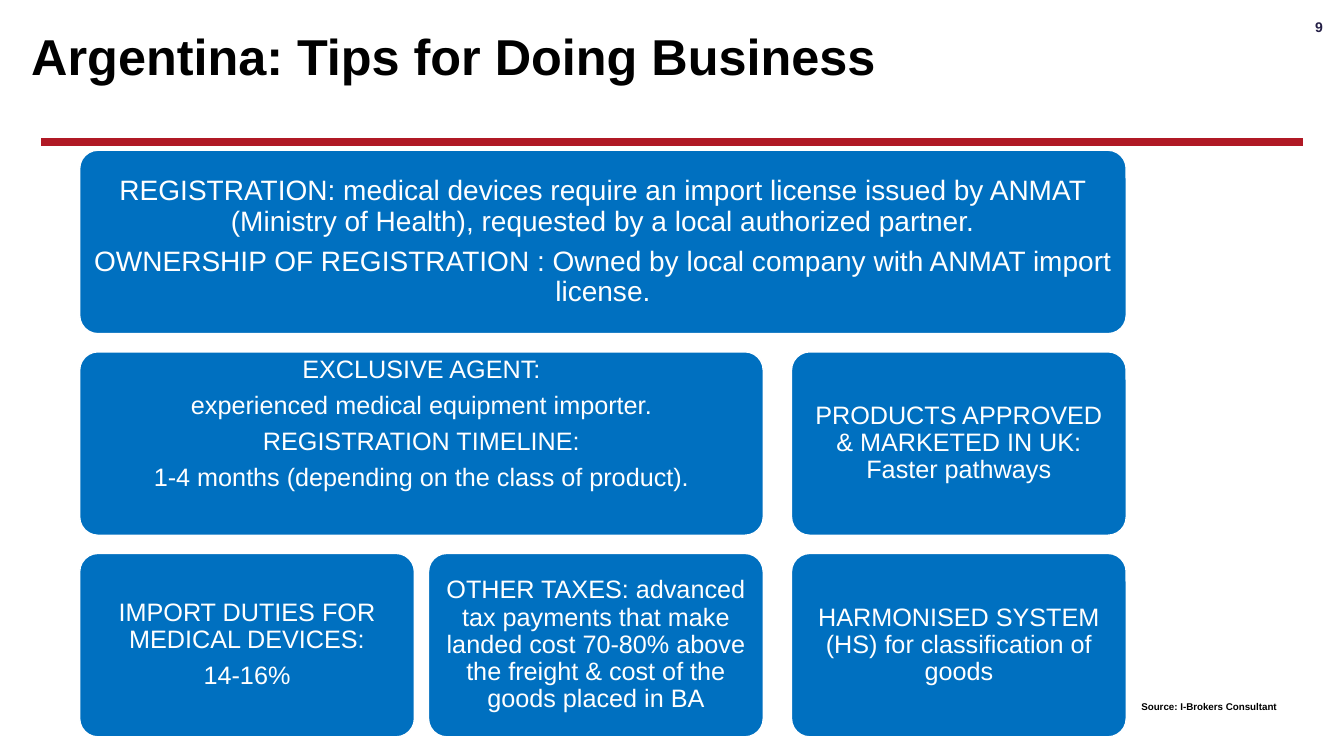
from dataclasses import dataclass

from lxml.etree import SubElement
from pptx import Presentation
from pptx.dml.color import RGBColor
from pptx.enum.shapes import MSO_CONNECTOR, MSO_SHAPE
from pptx.enum.text import MSO_ANCHOR, PP_ALIGN
from pptx.oxml.ns import qn
from pptx.util import Inches, Pt

BLUE, RED, NAVY, WHITE, BLACK = "0070C0", "B01925", "241F46", "FFFFFF", "000000"
COLUMNS = (0.79, 4.25, 7.85)
ROW_TOP, ROW_PITCH = 1.49, 2.0
CARD_W, CARD_H = 3.32, 1.82


@dataclass
class Card:
    row: int
    first: int
    last: int
    lines: list[str]
    size: int = 18
    inset: float = 0.07
    top: float = 0.07
    bottom: float = 0.07


CARDS = [
    Card(0, 0, 2, [
        "REGISTRATION: medical devices require an import license issued by ANMAT "
        "(Ministry of Health), requested by a local authorized partner.",
        "OWNERSHIP OF REGISTRATION : Owned by local company with ANMAT import license.",
    ], size=20, inset=0.08),
    Card(1, 0, 1, [
        "EXCLUSIVE AGENT:",
        "experienced medical equipment importer.",
        "REGISTRATION TIMELINE:",
        "1-4 months (depending on the class of product).",
    ], top=0, bottom=0.39),
    Card(1, 2, 2, ["PRODUCTS APPROVED & MARKETED IN UK: Faster pathways"]),
    Card(2, 0, 0, ["IMPORT DUTIES FOR MEDICAL DEVICES:", "14-16%"]),
    Card(2, 1, 1, [
        "OTHER TAXES: advanced tax payments that make landed cost 70-80% above "
        "the freight & cost of the goods placed in BA",
    ]),
    Card(2, 2, 2, ["HARMONISED SYSTEM (HS) for classification of goods"]),
]


def rgb(color: str) -> RGBColor:
    return RGBColor.from_string(color)


def write(tf, lines: list[str], *, size: int, color: str = BLACK, bold: bool = False,
          align=PP_ALIGN.LEFT, spacing: float = 1.0, after: float = 0) -> None:
    tf.word_wrap = True
    for i, text in enumerate(lines):
        p = tf.paragraphs[0] if i == 0 else tf.add_paragraph()
        p.alignment = align
        p.line_spacing = spacing
        p.space_before = Pt(0)
        p.space_after = Pt(after)
        r = p.add_run()
        r.text = text
        r.font.name = "Arial"
        r.font.size = Pt(size)
        r.font.bold = bold
        r.font.color.rgb = rgb(color)


def set_insets(tf, left: float, top: float, right: float, bottom: float) -> None:
    tf.margin_left, tf.margin_top = Inches(left), Inches(top)
    tf.margin_right, tf.margin_bottom = Inches(right), Inches(bottom)


def add_title(s) -> None:
    sp = s.shapes.title
    sp.left, sp.top = Inches(0.21), Inches(0.27)
    sp.width, sp.height = Inches(12.64), Inches(0.68)
    tf = sp.text_frame
    tf.vertical_anchor = MSO_ANCHOR.TOP
    write(tf, ["Argentina: Tips for Doing Business"], size=36, bold=True, spacing=0.9)


def add_page_number(s) -> None:
    sp = s.shapes.add_textbox(Inches(12.82), Inches(0.18), Inches(0.3), Inches(0.17))
    set_insets(sp.text_frame, 0, 0, 0, 0)
    write(sp.text_frame, ["9"], size=10, color=NAVY, bold=True, align=PP_ALIGN.RIGHT)


def add_rule(s) -> None:
    line = s.shapes.add_connector(MSO_CONNECTOR.STRAIGHT, Inches(0.41), Inches(1.41),
                                  Inches(12.92), Inches(1.41))
    line.line.color.rgb = rgb(RED)
    line.line.width = Pt(6)
    SubElement(line._element.spPr, qn("a:effectLst"))


def add_card(s, card: Card) -> None:
    left = COLUMNS[card.first]
    width = COLUMNS[card.last] + CARD_W - left
    sp = s.shapes.add_shape(MSO_SHAPE.ROUNDED_RECTANGLE, Inches(left),
                            Inches(ROW_TOP + card.row * ROW_PITCH),
                            Inches(width), Inches(CARD_H))
    sp.adjustments[0] = 0.1
    sp.shadow.inherit = False
    sp.fill.solid()
    sp.fill.fore_color.rgb = rgb(BLUE)
    sp.line.color.rgb = rgb(WHITE)
    sp.line.width = Pt(1)
    tf = sp.text_frame
    tf.vertical_anchor = MSO_ANCHOR.MIDDLE
    set_insets(tf, card.inset, card.top, card.inset, card.bottom)
    write(tf, card.lines, size=card.size, color=WHITE, align=PP_ALIGN.CENTER,
          spacing=0.9, after=0.35 * card.size)


def add_source(s) -> None:
    table = s.shapes.add_table(1, 1, Inches(11.22), Inches(6.91),
                               Inches(1.64), Inches(0.41)).table
    cell = table.cell(0, 0)
    cell.fill.solid()
    cell.fill.fore_color.rgb = rgb(WHITE)
    write(cell.text_frame, ["Source: I-Brokers Consultant"], size=7, bold=True)


def main() -> None:
    prs = Presentation()
    prs.slide_width, prs.slide_height = Inches(13.33), Inches(7.5)
    s = prs.slides.add_slide(prs.slide_layouts[5])
    add_page_number(s)
    add_rule(s)
    add_title(s)
    for card in CARDS:
        add_card(s, card)
    add_source(s)
    prs.save("out.pptx")


if __name__ == "__main__":
    main()
